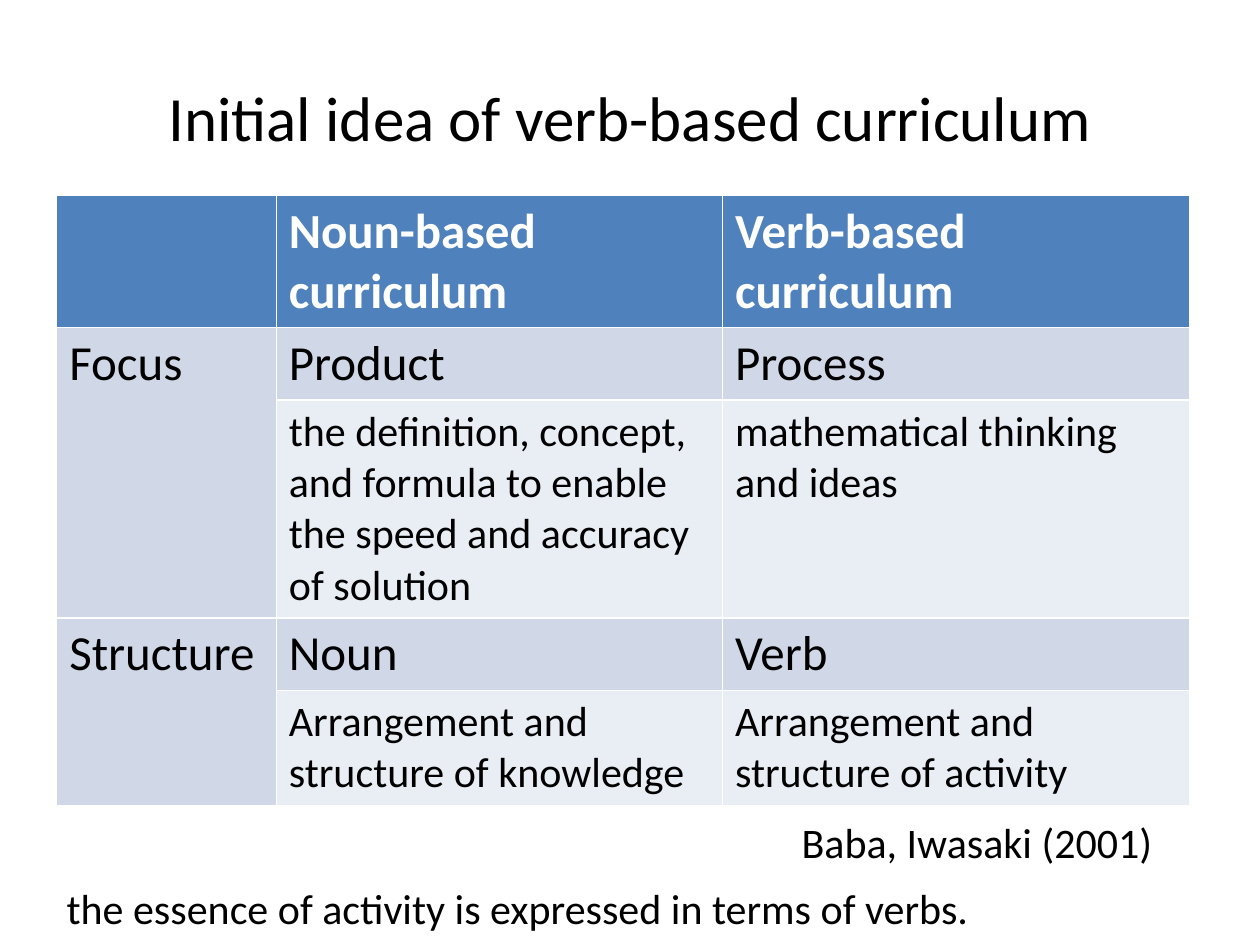
from pptx import Presentation
from pptx.dml.color import RGBColor
from pptx.enum.text import MSO_ANCHOR, PP_ALIGN
from pptx.util import Pt

CENTER = PP_ALIGN.CENTER
MIDDLE = MSO_ANCHOR.MIDDLE
BLACK = RGBColor(0x00, 0x00, 0x00)
WHITE = RGBColor(0xFF, 0xFF, 0xFF)
HEADER_BLUE = RGBColor(0x4F, 0x81, 0xBD)
BAND_DARK = RGBColor(0xD0, 0xD8, 0xE8)
BAND_LIGHT = RGBColor(0xE9, 0xED, 0xF4)

COLUMN_WIDTHS = [125.5, 255, 267]
# Each row: height, fill, text size, cell texts
ROWS = [
    (74, HEADER_BLUE, 28, ["", "Noun-based curriculum", "Verb-based curriculum"]),
    (41, BAND_DARK, 28, ["Focus", "Product", "Process"]),
    (123, BAND_LIGHT, 24, [
        "",
        "the definition, concept, and formula to enable the speed and accuracy of solution",
        "mathematical thinking and ideas",
    ]),
    (41, BAND_DARK, 28, ["Structure", "Noun", "Verb"]),
    (65, BAND_LIGHT, 24, [
        "",
        "Arrangement and structure of knowledge",
        "Arrangement and structure of activity",
    ]),
]
NOTES = [
    ("the essence of activity is expressed in terms of verbs.", 31, 500.5, 689),
    ("Baba, Iwasaki (2001)", 451, 463, 237.5),
]


def write(text_frame, text, size, color=BLACK, bold=False):
    text_frame.text = text
    for run in text_frame.paragraphs[0].runs:
        run.font.name = "Calibri"
        run.font.size = Pt(size)
        run.font.bold = bold
        run.font.color.rgb = color


presentation = Presentation()
presentation.slide_width = Pt(720)
presentation.slide_height = Pt(540)
title_only_layout = presentation.slide_layouts[5]
slide = presentation.slides.add_slide(title_only_layout)

title = slide.shapes.title
title.left, title.top, title.width, title.height = Pt(36), Pt(21.6), Pt(648), Pt(90)
write(title.text_frame, "Initial idea of verb-based curriculum", 36)
title.text_frame.vertical_anchor = MIDDLE
title.text_frame.paragraphs[0].alignment = CENTER

table = slide.shapes.add_table(
    len(ROWS), len(COLUMN_WIDTHS), Pt(32.4), Pt(111.6),
    Pt(sum(COLUMN_WIDTHS)), Pt(sum(row[0] for row in ROWS)),
).table
for column, width in zip(table.columns, COLUMN_WIDTHS):
    column.width = Pt(width)

for row_index, (height, fill, size, texts) in enumerate(ROWS):
    table.rows[row_index].height = Pt(height)
    is_header = row_index == 0
    for column_index, text in enumerate(texts):
        cell = table.cell(row_index, column_index)
        cell.fill.solid()
        cell.fill.fore_color.rgb = fill
        if text:
            write(cell.text_frame, text, size, WHITE if is_header else BLACK, is_header)

for first_row in (1, 3):
    table.cell(first_row, 0).merge(table.cell(first_row + 1, 0))

for text, left, top, width in NOTES:
    note = slide.shapes.add_textbox(Pt(left), Pt(top), Pt(width), Pt(36))
    note.text_frame.word_wrap = True
    write(note.text_frame, text, 24)

presentation.save("out.pptx")
